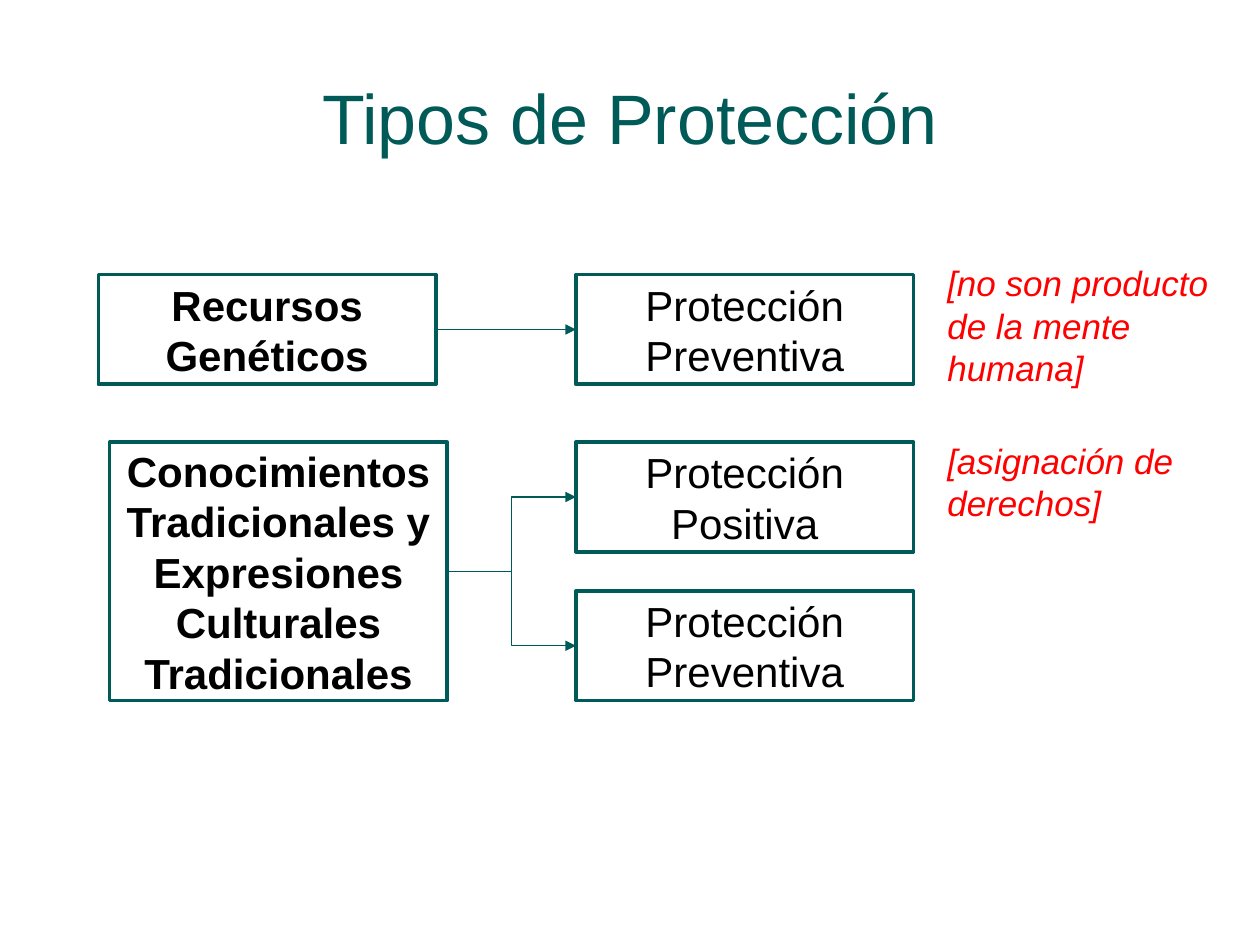
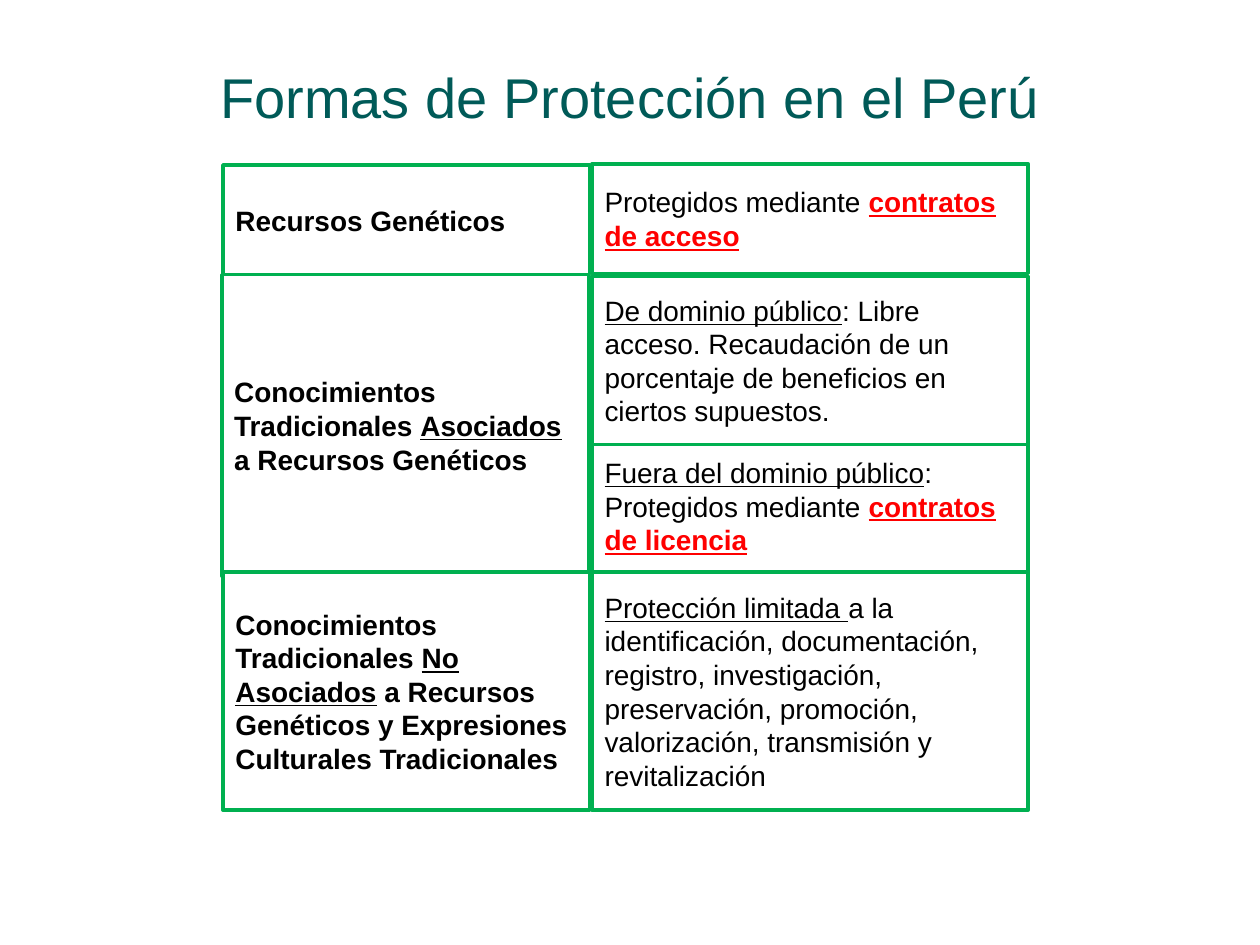
"""Build two slides on the types and forms of protection of genetic resources and traditional knowledge."""
from dataclasses import dataclass
from typing import Any, NamedTuple, Optional

import pptx
import pptx.dml.color
import pptx.enum.shapes
import pptx.enum.text
import pptx.oxml.ns
import pptx.util
from lxml import etree

Inches = pptx.util.Inches
ALIGN = pptx.enum.text.PP_ALIGN
ANCHOR = pptx.enum.text.MSO_ANCHOR
CONNECTOR = pptx.enum.shapes.MSO_CONNECTOR
RECT = pptx.enum.shapes.MSO_SHAPE.RECTANGLE
LEFT_SITE, RIGHT_SITE = 1, 3

COLORS = {"teal": "005A58", "green": "00B050", "red": "FF0000", "black": "000000", "white": "FFFFFF"}
PLAIN: dict[str, Any] = {}
BOLD = {"bold": True}
ITALIC = {"italic": True}
UNDERLINE = {"underline": True}
BOLD_UNDERLINE = BOLD | UNDERLINE


class Run(NamedTuple):
    text: str
    style: dict[str, Any] = PLAIN
    color: str = "black"


@dataclass
class Box:
    left: float
    top: float
    width: float
    height: float
    runs: list[Run]
    size: int
    line: Optional[str] = None
    align: Any = ALIGN.LEFT
    anchor: Any = ANCHOR.MIDDLE


def rgb(name: str) -> pptx.dml.color.RGBColor:
    return pptx.dml.color.RGBColor.from_string(COLORS[name])


def set_all(obj: Any, values: dict[str, Any]) -> None:
    for name, value in values.items():
        setattr(obj, name, value)


def write_text(sp: Any, box: Box) -> None:
    tf = sp.text_frame
    set_all(tf, {"word_wrap": True, "vertical_anchor": box.anchor})
    p = tf.paragraphs[0]
    p.alignment = box.align
    for run in box.runs:
        r = p.add_run()
        r.text = run.text
        set_all(r.font, {"name": "Arial", "size": pptx.util.Pt(box.size)} | run.style)
        r.font.color.rgb = rgb(run.color)


def draw_box(s: Any, box: Box) -> Any:
    frame = [Inches(v) for v in (box.left, box.top, box.width, box.height)]
    if box.line:
        sp = s.shapes.add_shape(RECT, *frame)
        sp.shadow.inherit = False
        sp.fill.solid()
        sp.fill.fore_color.rgb = rgb("white")
        sp.line.color.rgb = rgb(box.line)
        sp.line.width = pptx.util.Pt(2)
    else:
        sp = s.shapes.add_textbox(*frame)
    write_text(sp, box)
    return sp


def draw_title(s: Any, text: str, top: float, height: float, size: int) -> None:
    draw_box(s, Box(0.5, top, 9, height, [Run(text, color="teal")], size, align=ALIGN.CENTER))


def draw_arrow(s: Any, kind: Any, source: Any, target: Any) -> None:
    cx = s.shapes.add_connector(kind, 0, 0, 0, 0)
    cx.begin_connect(source, RIGHT_SITE)
    cx.end_connect(target, LEFT_SITE)
    cx.line.color.rgb = rgb("teal")
    cx.line.width = pptx.util.Pt(0.75)
    qn = pptx.oxml.ns.qn
    etree.SubElement(cx.line._get_or_add_ln(), qn("a:tailEnd"), type="triangle")
    etree.SubElement(cx._element.spPr, qn("a:effectLst"))


def build_types(s: Any) -> None:
    draw_title(s, "Tipos de Protección", 0.3, 1.25, 40)

    def node(left: float, top: float, height: float, text: str, style: dict[str, Any] = PLAIN) -> Any:
        return draw_box(s, Box(left, top, 2.68, height, [Run(text, style)], 24, "teal", ALIGN.CENTER))

    resources = node(0.78, 2.18, 0.87, "Recursos Genéticos", BOLD)
    knowledge = node(0.87, 3.51, 2.05,
                     "Conocimientos Tradicionales y Expresiones Culturales Tradicionales", BOLD)
    preventive, positive, defensive = [
        node(4.57, top, 0.87, f"Protección {kind}")
        for top, kind in ((2.18, "Preventiva"), (3.51, "Positiva"), (4.69, "Preventiva"))
    ]
    draw_arrow(s, CONNECTOR.STRAIGHT, resources, preventive)
    for target in (defensive, positive):
        draw_arrow(s, CONNECTOR.ELBOW, knowledge, target)

    for top, height, note in ((2.03, 1.11, "[no son producto de la mente humana]"),
                              (3.44, 0.77, "[asignación de derechos]")):
        draw_box(s, Box(7.42, top, 2.34, height, [Run(note, ITALIC, "red")], 20, anchor=ANCHOR.TOP))


def build_forms(s: Any) -> None:
    subjects = [
        (1.77, 1.31, 0.87, [Run("Recursos Genéticos", BOLD)]),
        (1.76, 2.18, 2.39, [Run("Conocimientos Tradicionales ", BOLD),
                            Run("Asociados", BOLD_UNDERLINE),
                            Run(" a Recursos Genéticos", BOLD)]),
        (1.77, 4.54, 1.89, [Run("Conocimientos Tradicionales ", BOLD),
                            Run("No Asociados", BOLD_UNDERLINE),
                            Run(" a Recursos Genéticos y Expresiones Culturales Tradicionales", BOLD)]),
    ]
    protections = [
        (4.7, 4.54, 1.89, [Run("Protección limitada ", UNDERLINE),
                           Run("a la identificación, documentación, registro, investigación, "
                               "preservación, promoción, valorización, transmisión y revitalización")]),
        (4.7, 1.3, 0.87, [Run("Protegidos mediante "),
                          Run("contratos de acceso", BOLD_UNDERLINE, "red")]),
        (4.7, 3.49, 1.05, [Run("Fuera del dominio público", UNDERLINE),
                           Run(": Protegidos mediante "),
                           Run("contratos de licencia", BOLD_UNDERLINE, "red")]),
        (4.7, 2.19, 1.34, [Run("De dominio público", UNDERLINE),
                           Run(": Libre acceso. Recaudación de un porcentaje de beneficios "
                               "en ciertos supuestos.")]),
    ]
    for width, column in ((2.91, subjects), (3.46, protections)):
        for left, top, height, runs in column:
            draw_box(s, Box(left, top, width, height, runs, 16, "green"))
    draw_title(s, "Formas de Protección en el Perú", 0.18, 1.17, 32)


def main() -> None:
    prs = pptx.Presentation()
    set_all(prs, {"slide_width": Inches(10), "slide_height": Inches(7.5)})
    for build in (build_types, build_forms):
        build(prs.slides.add_slide(prs.slide_layouts[6]))
    prs.save("out.pptx")


if __name__ == "__main__":
    main()
